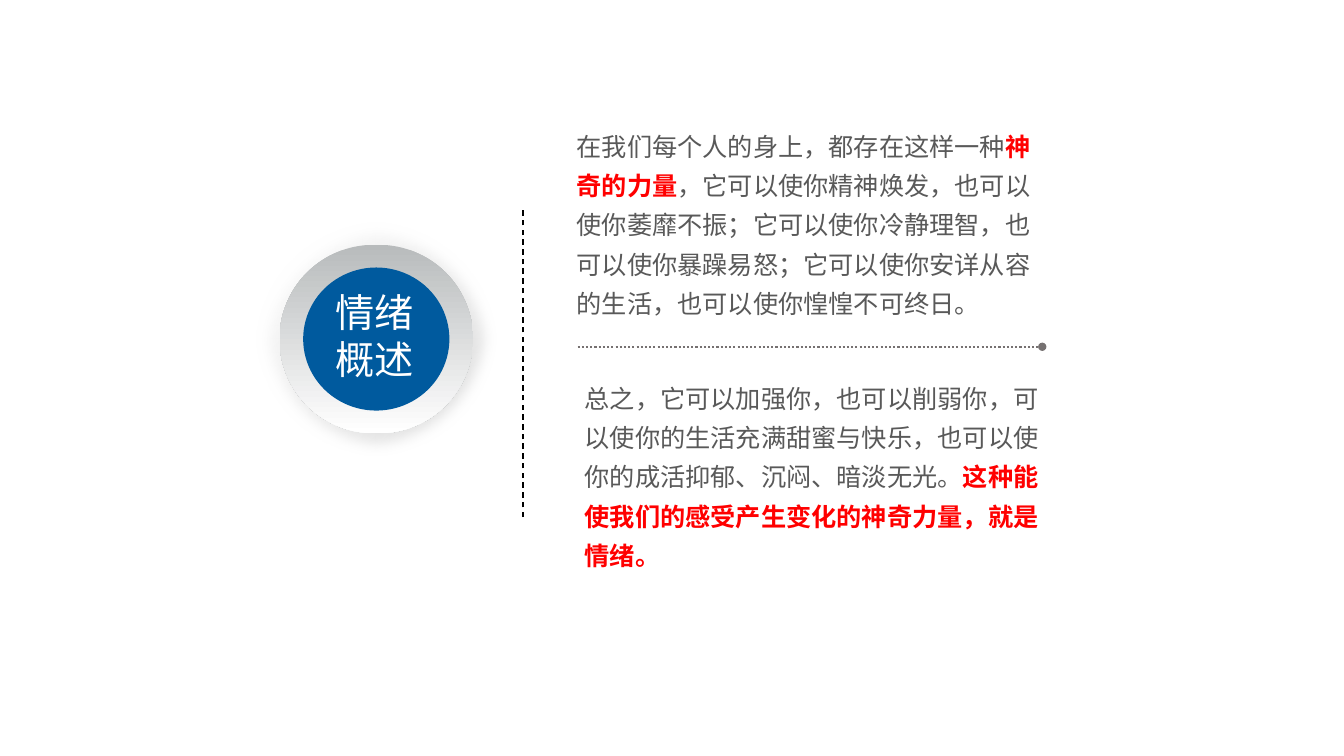
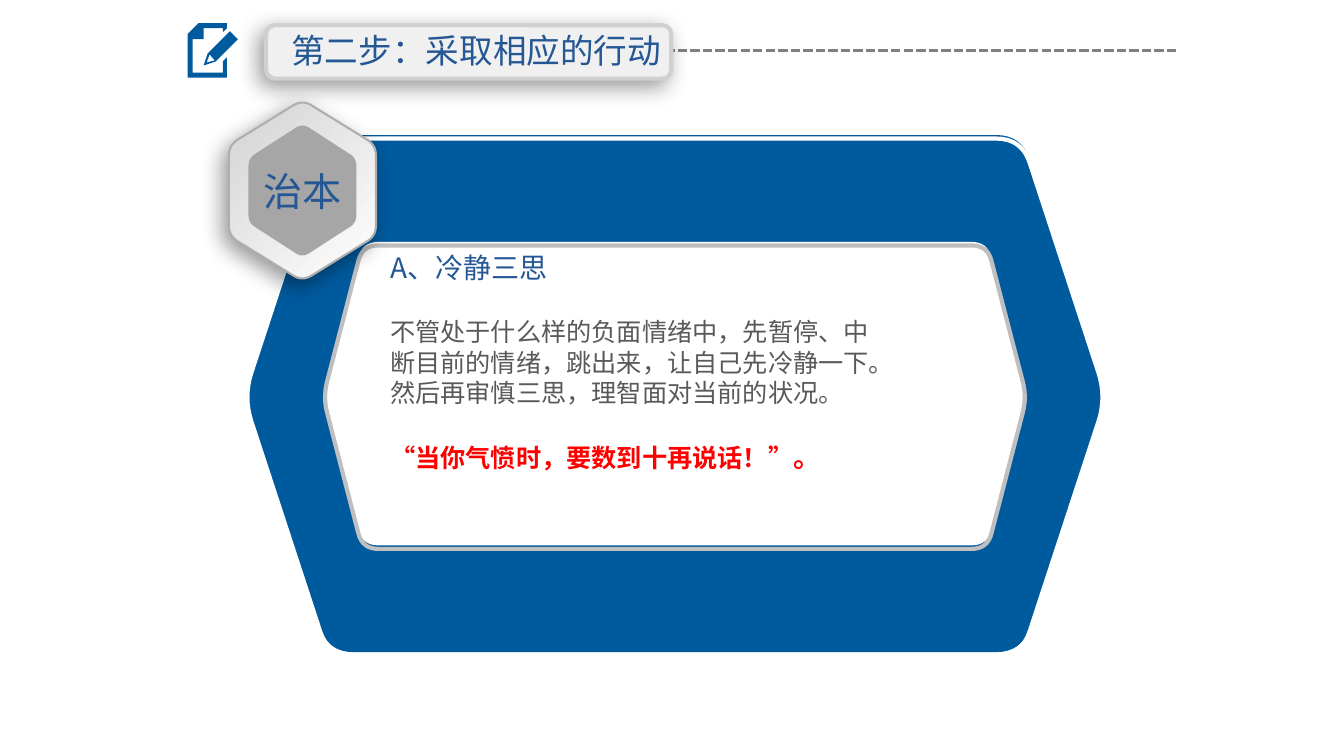
from math import dist

from lxml import etree
from pptx import Presentation
from pptx.dml.color import RGBColor
from pptx.enum.dml import MSO_LINE
from pptx.enum.lang import MSO_LANGUAGE_ID
from pptx.enum.shapes import MSO_CONNECTOR, MSO_SHAPE
from pptx.enum.text import MSO_ANCHOR, MSO_AUTO_SIZE, PP_ALIGN
from pptx.oxml import parse_xml
from pptx.oxml.ns import nsdecls, qn
from pptx.util import Inches, Pt

# Shared style
FONT = "Noto Sans CJK SC"
BLUE = RGBColor(0x00, 0x5A, 0x9E)
TITLE_BLUE = RGBColor(0x24, 0x57, 0x94)
RED = RGBColor(0xFF, 0x00, 0x00)
WHITE = RGBColor(0xFF, 0xFF, 0xFF)
BLACK = RGBColor(0x00, 0x00, 0x00)
TEXT_GREY = RGBColor(0x59, 0x59, 0x59)
RULE_GREY = RGBColor(0x76, 0x71, 0x71)
DASH_GREY = RGBColor(0x80, 0x80, 0x80)
CORE_GREY = RGBColor(0xA6, 0xA6, 0xA6)
EDGE_GREY = RGBColor(0xAE, 0xAE, 0xAE)
RING_GREY = RGBColor(0xB8, 0xBB, 0xBC)
FRAME_GREY = RGBColor(0xBF, 0xBF, 0xBF)
PILL_EDGE = RGBColor(0xD0, 0xD0, 0xD0)
BADGE_GREY = RGBColor(0xD3, 0xD3, 0xD3)
HALO_GREY = RGBColor(0xD9, 0xD9, 0xD9)
PILL_GREY = RGBColor(0xF0, 0xF0, 0xF0)
LEFT, CENTER = PP_ALIGN.LEFT, PP_ALIGN.CENTER
TOP, NO_FIT = MSO_ANCHOR.TOP, MSO_AUTO_SIZE.NONE
DASH, DOTS, SHORT_DASH = MSO_LINE.DASH, MSO_LINE.ROUND_DOT, MSO_LINE.SQUARE_DOT
OVAL, ROUNDED = MSO_SHAPE.OVAL, MSO_SHAPE.ROUNDED_RECTANGLE
STRAIGHT = MSO_CONNECTOR.STRAIGHT
CHINESE = MSO_LANGUAGE_ID.SIMPLIFIED_CHINESE
SHADOW = ('<a:outerShdw {} blurRad="203200" dist="82550" dir="8100000" algn="tl" rotWithShape="0">'
          '<a:srgbClr val="000000"><a:alpha val="40000"/></a:srgbClr></a:outerShdw>'
          ).format(nsdecls("a"))
SOFT_EDGE = '<a:softEdge {} rad="127000"/>'.format(nsdecls("a"))

# Grid of 100 columns by 100 rows
deck = Presentation()
deck.slide_width, deck.slide_height = Inches(13.33), Inches(7.5)
COLUMN, ROW = deck.slide_width / 100, deck.slide_height / 100


def area(*place):
    """Turn columns and rows, taken in turn, into lengths."""
    return [round(value * (ROW if index % 2 else COLUMN))
            for index, value in enumerate(place)]


def write(box, paragraphs, size=18, color=TEXT_GREY, spacing=1.0, after=0,
          align=LEFT, inset=(0.1, 0.05), wrap=True):
    """Fill a box; a paragraph is a list of (text, format changes)."""
    frame = box.text_frame
    frame.word_wrap, frame.auto_size, frame.vertical_anchor = wrap, NO_FIT, TOP
    frame.margin_left = frame.margin_right = Inches(inset[0])
    frame.margin_top = frame.margin_bottom = Inches(inset[1])
    for index, spans in enumerate(paragraphs):
        para = frame.paragraphs[0] if index == 0 else frame.add_paragraph()
        para.alignment, para.line_spacing = align, spacing
        para.space_before, para.space_after = Pt(0), Pt(after)
        for text, change in spans:
            span = para.add_run()
            span.text = text
            font = span.font
            font.name, font.language_id = FONT, CHINESE
            font.size = Pt(change.get("size", size))
            font.bold = change.get("bold", False)
            font.color.rgb = change.get("color", color)
            etree.SubElement(font._element, qn("a:ea")).set("typeface", FONT)


overview, action = [deck.slides.add_slide(deck.slide_layouts[5]) for _ in range(2)]
STRONG = {"color": RED, "bold": True}

# Rules on both slides
rules = [
    (overview, (42.98, 45.87, 77.55, 45.87), RULE_GREY, 1.5, DOTS, True),
    (overview, (38.93, 68.4, 38.93, 27.47), BLACK, 1, DASH, False),
    (action, (87.53, 6.67, 36.45, 6.67), DASH_GREY, 2.25, SHORT_DASH, False),
]
for page, ends, color, weight, dash, dotted_end in rules:
    rule = page.shapes.add_connector(STRAIGHT, *area(*ends))
    rule.line.color.rgb, rule.line.width = color, Pt(weight)
    rule.line.dash_style = dash
    properties = rule._element.spPr
    if dotted_end:
        etree.SubElement(properties.find(qn("a:ln")), qn("a:tailEnd")).set("type", "oval")
    etree.SubElement(properties, qn("a:effectLst"))

# Overview: round button made of halo, ring and disc
discs = [
    (OVAL, 18.08, 31.33, (WHITE, HALO_GREY), 315),
    (ROUNDED, 14.4, 24.93, (RING_GREY, WHITE), 270),
    (OVAL, 10.88, 18.93, (BLUE, BLUE), None),
]
for kind, width, height, colors, angle in discs:
    disc = overview.shapes.add_shape(
        kind, *area(28 - width / 2, 44.85 - height / 2, width, height))
    disc.shadow.inherit = False
    disc.line.fill.background()
    if kind == ROUNDED:
        disc.adjustments[0] = 0.5
    if angle is None:
        disc.fill.solid()
        disc.fill.fore_color.rgb = colors[0]
    else:
        disc.fill.gradient()
        disc.fill.gradient_angle = angle
        for stop, color in zip(disc.fill.gradient_stops, colors):
            stop.color.rgb = color
    if angle == 315:
        disc._element.spPr.find(qn("a:effectLst")).append(parse_xml(SOFT_EDGE))

# Overview: the two passages
passages = [
    ((42.38, 15.6, 35.78, 27.33), [
        ("在我们每个人的身上，都存在这样一种", {}),
        ("神奇的力量", STRONG),
        ("，它可以使你精神焕发，也可以使你萎靡不振；它可以使你冷静理智，也可以使你暴躁易怒；"
         "它可以使你安详从容的生活，也可以使你惶惶不可终日。", {})]),
    ((42.98, 48.93, 36.3, 27.33), [
        ("总之，它可以加强你，也可以削弱你，可以使你的生活充满甜蜜与快乐，"
         "也可以使你的成活抑郁、沉闷、暗淡无光。", {}),
        ("这种能使我们的感受产生变化的神奇力量，就是情绪。", STRONG)]),
]
for place, spans in passages:
    write(overview.shapes.add_textbox(*area(*place)), [spans],
          spacing=1.3, inset=(0.07, 0.04))

# Action: title pill
pill = action.shapes.add_shape(ROUNDED, *area(19.8, 3.33, 30.15, 7.07))
pill.fill.solid()
pill.fill.fore_color.rgb = PILL_GREY
pill.line.color.rgb, pill.line.width = PILL_EDGE, Pt(3)
pill.shadow.inherit = False
pill._element.spPr.find(qn("a:effectLst")).append(parse_xml(SHADOW))

# Action: sheet and pencil icon, in hundredths of an inch
icon = [
    [[(221, 72), (191, 72), (191, 39), (202, 39), (202, 28), (221, 28), (221, 32),
      (225, 28), (225, 23), (197, 23), (186, 34), (186, 77), (225, 77), (225, 57),
      (221, 61)]],
    [[(206, 53), (202, 65), (214, 61), (236, 39), (228, 31)],
     [(213, 60), (205, 62), (208, 54)]],
]
for contours in icon:
    start = contours[0][0]
    builder = action.shapes.build_freeform(*start, scale=Inches(0.01))
    for contour in contours:
        if contour[0] != start:
            builder.move_to(*contour[0])
        builder.add_line_segments(contour[1:], close=True)
    part = builder.convert_to_shape()
    part.shadow.inherit = False
    part.fill.solid()
    part.fill.fore_color.rgb = BLUE
    part.line.fill.background()

# Action: rounded hexagons, half sizes and corner cuts in rows
# centre, tip, flat, side, cut, upright, fill, line, line width
PANEL, FRAME, BADGE = (50.22, 52.07), (50.22, 52.53), (22.5, 25.2)
hexagons = [
    (PANEL, 57.07, 45.87, 34.2, 3.4, False, BLUE, None, 0),
    (PANEL, 46.53, 41.33, 20.07, 2.1, False, WHITE, None, 0),
    (FRAME, 57.07, 45.87, 34.2, 3.4, False, None, WHITE, 3),
    (FRAME, 46.53, 41.33, 20.07, 2.1, False, None, FRAME_GREY, 3),
    (BADGE, 12, 6, 9.73, 1.4, True, BADGE_GREY, EDGE_GREY, 1.5),
    (BADGE, 8.87, 4.27, 7.13, 1, True, CORE_GREY, None, 0),
]
STEPS = 8
for centre, tip, flat, side, cut, upright, fill, edge, weight in hexagons:
    middle_x, middle_y = area(*centre)
    corners = [(-tip, 0), (-flat, -side), (flat, -side),
               (tip, 0), (flat, side), (-flat, side)]
    if upright:
        corners = [(y, x) for x, y in corners]
    outline = []
    for index, corner in enumerate(corners):
        before, after = corners[index - 1], corners[(index + 1) % 6]
        enter, leave = [
            [c + (n - c) * cut / dist(corner, near) for c, n in zip(corner, near)]
            for near in (before, after)]
        for step in range(STEPS + 1):
            t = step / STEPS
            x, y = [(1 - t) ** 2 * a + 2 * t * (1 - t) * b + t ** 2 * c
                    for a, b, c in zip(enter, corner, leave)]
            outline.append((round(middle_x + x * ROW), round(middle_y + y * ROW)))
    builder = action.shapes.build_freeform(*outline[0])
    builder.add_line_segments(outline[1:], close=True)
    hexagon = builder.convert_to_shape()
    hexagon.shadow.inherit = False
    if fill is None:
        hexagon.fill.background()
    elif fill == BADGE_GREY:
        hexagon.fill.gradient()
        hexagon.fill.gradient_angle = 315
        for stop, color in zip(hexagon.fill.gradient_stops, (BADGE_GREY, WHITE)):
            stop.color.rgb = color
        hexagon._element.spPr.find(qn("a:effectLst")).append(parse_xml(SHADOW))
    else:
        hexagon.fill.solid()
        hexagon.fill.fore_color.rgb = fill
    if edge is None:
        hexagon.line.fill.background()
    else:
        hexagon.line.color.rgb, hexagon.line.width = edge, Pt(weight)

# Action: advice and badge label
write(action.shapes.add_textbox(*area(28.28, 32.53, 37.36, 37.73)), [
    [("A、冷静三思", {"size": 20, "color": TITLE_BLUE})],
    [("不管处于什么样的负面情绪中，先暂停、中断目前的情绪，跳出来，让自己先冷静一下。"
      "然后再审慎三思，理智面对当前的状况。", {})],
    [("“当你气愤时，要数到十再说话！”", STRONG), ("。", {**STRONG, "size": 20})],
], after=23)
write(action.shapes.add_textbox(*area(16.8, 21.6, 11.4, 7.33)), [[("治本", {})]],
      size=28, color=TITLE_BLUE, align=CENTER, inset=(0.07, 0.04))

# Titles, brought in front of the shapes they sit on
titles = [
    (overview, "情绪概述", (24.23, 37.47, 7.88, 13.87), 28, WHITE, True),
    (action, "第二步：采取相应的行动", (20.93, 3.33, 29.25, 6.67), 24, TITLE_BLUE, False),
]
for page, text, place, size, color, wrap in titles:
    title = page.shapes.title
    title.left, title.top, title.width, title.height = area(*place)
    write(title, [[(text, {})]], size=size, color=color, wrap=wrap)
    page.shapes._spTree.append(title._element)

deck.save("out.pptx")
